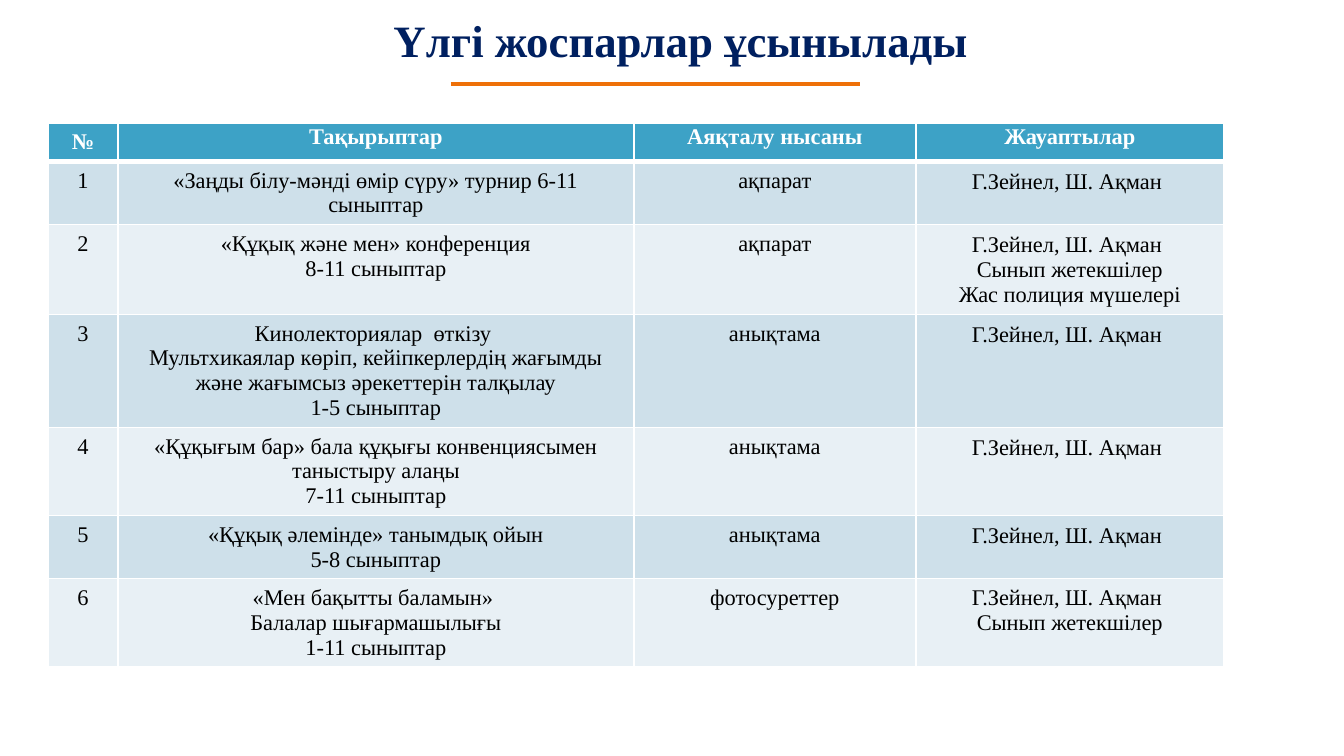
import pptx
import pptx.dml.color
import pptx.enum.shapes
import pptx.enum.text
import pptx.oxml
import pptx.oxml.ns
import pptx.util

RGB = pptx.dml.color.RGBColor
WHITE = RGB(0xFF, 0xFF, 0xFF)
BLACK = RGB(0x00, 0x00, 0x00)
NAVY = RGB(0x00, 0x20, 0x60)
ORANGE = RGB(0xEE, 0x70, 0x08)
TEAL = RGB(0x3D, 0xA2, 0xC6)
BANDS = [RGB(0xCE, 0xE0, 0xEA), RGB(0xE8, 0xF0, 0xF5)]

CENTER = pptx.enum.text.PP_ALIGN.CENTER
FONT = {"name": "Times New Roman", "size": pptx.util.Pt(12), "bold": False}
SCALE = 914400 / 134.4

COLS = [70, 516, 282, 308]
ROWS = [36, 60, 86, 109, 85, 60, 85]
HEADS = ["№", "Тақырыптар", "Аяқталу нысаны", "Жауаптылар"]
STAFF = "Г.Зейнел, Ш. Ақман "
LEADS = "Сынып жетекшілер"
PLANS = [
    (["«Заңды білу-мәнді өмір сүру» турнир 6-11 сыныптар"], "ақпарат", []),
    (["«Құқық және мен» конференция", "8-11 сыныптар"], "ақпарат",
     [LEADS, "Жас полиция мүшелері"]),
    (["Кинолекториялар  өткізу ",
      "Мультхикаялар көріп, кейіпкерлердің жағымды және жағымсыз әрекеттерін талқылау",
      "1-5 сыныптар"], "анықтама", []),
    (["«Құқығым бар» бала құқығы конвенциясымен таныстыру алаңы", "7-11 сыныптар"],
     "анықтама", []),
    (["«Құқық әлемінде» танымдық ойын", "5-8 сыныптар"], "анықтама", []),
    (["«Мен бақытты баламын» ", "Балалар шығармашылығы", "1-11 сыныптар"],
     "фотосуреттер", [LEADS]),
]


def px(num):
    return round(num * SCALE)


def adjust(item, values):
    for key, value in values.items():
        setattr(item, key, value)


class Deck:
    def __init__(self, wide, high):
        self.file = pptx.Presentation()
        adjust(self.file, {"slide_width": px(wide), "slide_height": px(high)})
        self.slide = self.file.slides.add_slide(self.file.slide_layouts[6])

    def text(self, frame, lines, color, **style):
        for spot, line in enumerate(lines):
            para = frame.paragraphs[0] if spot == 0 else frame.add_paragraph()
            para.alignment = CENTER
            run = para.add_run()
            run.text = line
            adjust(run.font, {**FONT, **style})
            run.font.color.rgb = color

    def title(self, words, left, top, wide, high):
        frame = self.slide.shapes.add_textbox(px(left), px(top), px(wide), px(high)).text_frame
        sides = ["margin_left", "margin_top", "margin_right", "margin_bottom"]
        adjust(frame, {"word_wrap": True, **dict.fromkeys(sides, px(13))})
        self.text(frame, [words], NAVY, size=pptx.util.Pt(24), bold=True)
        props = frame.paragraphs[0]._p.get_or_add_pPr()
        props.set("marL", str(px(67)))
        props.set("indent", str(px(-51)))

    def rule(self, left, right, top):
        kind = pptx.enum.shapes.MSO_CONNECTOR.STRAIGHT
        line = self.slide.shapes.add_connector(kind, px(left), px(top), px(right), px(top))
        line.line.color.rgb = ORANGE
        line.line.width = pptx.util.Pt(2.25)
        line._element.spPr.append(pptx.oxml.parse_xml(
            f'<a:effectLst {pptx.oxml.ns.nsdecls("a")}/>'))

    def table(self, left, top, cols, rows):
        shape = self.slide.shapes.add_table(
            len(rows), len(cols), px(left), px(top), px(sum(cols)), px(sum(rows)))
        grid = shape.table
        adjust(grid, {"first_row": False, "horz_banding": False})
        for col, wide in zip(grid.columns, cols):
            col.width = px(wide)
        for row, high in zip(grid.rows, rows):
            row.height = px(high)
        return grid

    def cell(self, cell, lines, fill, color, edges, bold=False):
        self.text(cell.text_frame, lines, color, bold=bold)
        cell.fill.solid()
        cell.fill.fore_color.rgb = fill
        props = cell._tc.get_or_add_tcPr()
        for spot, (side, wide) in enumerate(zip("LRTB", edges)):
            props.insert(spot, pptx.oxml.parse_xml(
                f'<a:ln{side} {pptx.oxml.ns.nsdecls("a")} w="{pptx.util.Pt(wide)}">'
                f'<a:solidFill><a:srgbClr val="{WHITE}"/></a:solidFill></a:ln{side}>'))


def main():
    deck = Deck(1344, 756)
    grid = deck.table(48, 123, COLS, ROWS)
    for col, head in enumerate(HEADS):
        cell = grid.cell(0, col)
        deck.cell(cell, [head], TEAL, WHITE, (1, 1, 1, 3), bold=True)
        if col:
            adjust(cell, {"margin_left": px(1), "margin_right": px(1),
                          "margin_top": 0, "margin_bottom": 0})
            cell.text_frame.paragraphs[0].line_spacing = 1.07
    for row, (theme, form, extra) in enumerate(PLANS, 1):
        edges = (1, 1, 3 if row == 1 else 1, 1)
        for col, lines in enumerate([[str(row)], theme, [form], [STAFF, *extra]]):
            deck.cell(grid.cell(row, col), lines, BANDS[(row - 1) % 2], BLACK, edges)
        if row < len(PLANS):
            grid.cell(row, 3).text_frame.paragraphs[0].line_spacing = 1.07
    deck.title("Үлгі жоспарлар ұсынылады", 46, 0, 1253, 117)
    deck.rule(451, 860, 84)
    deck.file.save("out.pptx")


if __name__ == "__main__":
    main()
